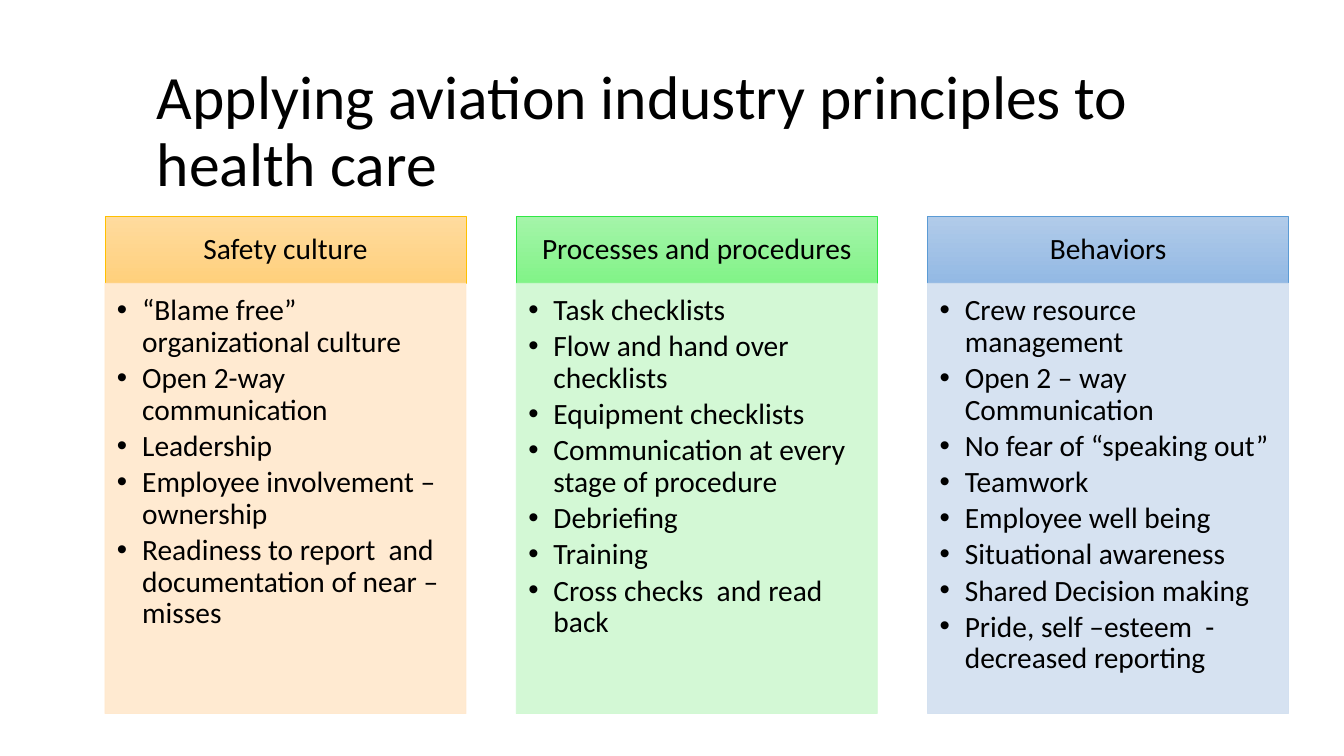
import pptx
import pptx.util
import pptx.dml.color
import pptx.enum.shapes
import pptx.enum.text
import pptx.oxml.ns
import lxml.etree

Pt = pptx.util.Pt
ALIGN = pptx.enum.text.PP_ALIGN
ANCHOR = pptx.enum.text.MSO_ANCHOR
qn = pptx.oxml.ns.qn

LEFT, STEP, WIDTH = 75, 293.8, 257.9
HEAD_TOP, HEAD_HIGH = 154.8, 47.5
BODY_TOP, BODY_HIGH = 202.3, 307.4

# Heading, gradient start and end, heading line, body fill, items
COLUMNS = [
    ("Safety culture", "FFDB9E", "FFD07C", "FFC000", "FFE8CC", [
        "“Blame free” organizational culture",
        "Open 2-way communication",
        "Leadership",
        "Employee involvement – ownership",
        "Readiness to report  and documentation of near – misses",
    ]),
    ("Processes and procedures", "A4F4A9", "82F388", "30E845", "CFF8D1", [
        "Task checklists",
        "Flow and hand over checklists",
        "Equipment checklists",
        "Communication at every stage of procedure",
        "Debriefing",
        "Training",
        "Cross checks  and read back",
    ]),
    ("Behaviors", "B1CBE9", "93B9E4", "5B9BD5", "D2DFF0", [
        "Crew resource management",
        "Open 2 – way Communication",
        "No fear of “speaking out”",
        "Teamwork",
        "Employee well being",
        "Situational awareness",
        "Shared Decision making",
        "Pride, self –esteem  - decreased reporting",
    ]),
]


def color(code):
    return pptx.dml.color.RGBColor.from_string(code)


def set_frame(frame, anchor, insets):
    frame.word_wrap = True
    frame.vertical_anchor = anchor
    (frame.margin_left, frame.margin_top,
     frame.margin_right, frame.margin_bottom) = [Pt(n) for n in insets]


def style(para, size, align=ALIGN.LEFT):
    para.alignment = align
    para.line_spacing = 0.9
    for run in para.runs:
        run.font.size = Pt(size)
        run.font.name = "Calibri"
        run.font.color.rgb = color("000000")


def add_bullet(para):
    props = para._p.get_or_add_pPr()
    props.set("marL", str(Pt(18)))
    props.set("indent", str(-Pt(18)))
    font = lxml.etree.SubElement(props, qn("a:buFont"))
    font.set("typeface", "Arial")
    mark = lxml.etree.SubElement(props, qn("a:buChar"))
    mark.set("char", "•")


def add_box(slide, left, top, high, line):
    kind = pptx.enum.shapes.MSO_SHAPE.RECTANGLE
    box = slide.shapes.add_shape(kind, Pt(left), Pt(top), Pt(WIDTH), Pt(high))
    box.shadow.inherit = False
    box.line.color.rgb = color(line)
    box.line.width = Pt(0.5)
    return box


def add_title(slide, text):
    box = slide.shapes.add_textbox(Pt(105), Pt(36.7), Pt(756), Pt(116.6))
    set_frame(box.text_frame, ANCHOR.MIDDLE, (7.2, 3.6, 7.2, 3.6))
    box.text_frame.text = text
    style(box.text_frame.paragraphs[0], 44)


def add_head(slide, left, text, start, end, line):
    box = add_box(slide, left, HEAD_TOP, HEAD_HIGH, line)
    box.fill.gradient()
    box.fill.gradient_angle = 270
    for stop, code in zip(box.fill.gradient_stops, (start, end)):
        stop.color.rgb = color(code)
    set_frame(box.text_frame, ANCHOR.MIDDLE, (11.5, 6.5, 11.5, 6.5))
    box.text_frame.text = text
    style(box.text_frame.paragraphs[0], 21, ALIGN.CENTER)


def add_body(slide, left, items, fill):
    box = add_box(slide, left, BODY_TOP, BODY_HIGH, fill)
    box.fill.solid()
    box.fill.fore_color.rgb = color(fill)
    # Fill and line are 90 % opaque
    for node in box._element.spPr.iter(qn("a:srgbClr")):
        lxml.etree.SubElement(node, qn("a:alpha")).set("val", "90000")
    frame = box.text_frame
    set_frame(frame, ANCHOR.TOP, (8.6, 8.6, 11.5, 13))
    frame.text = "\n".join(items)
    for para in frame.paragraphs:
        add_bullet(para)
        style(para, 21)
        para.space_after = Pt(3.15)


def main():
    deck = pptx.Presentation()
    deck.slide_width, deck.slide_height = Pt(960), Pt(540)
    slide = deck.slides.add_slide(deck.slide_layouts[6])

    add_title(slide, "Applying aviation industry principles to health care")

    # Three columns at equal steps
    for index, (text, start, end, line, fill, items) in enumerate(COLUMNS):
        left = LEFT + index * STEP
        add_head(slide, left, text, start, end, line)
        add_body(slide, left, items, fill)

    deck.save("out.pptx")


if __name__ == "__main__":
    main()
